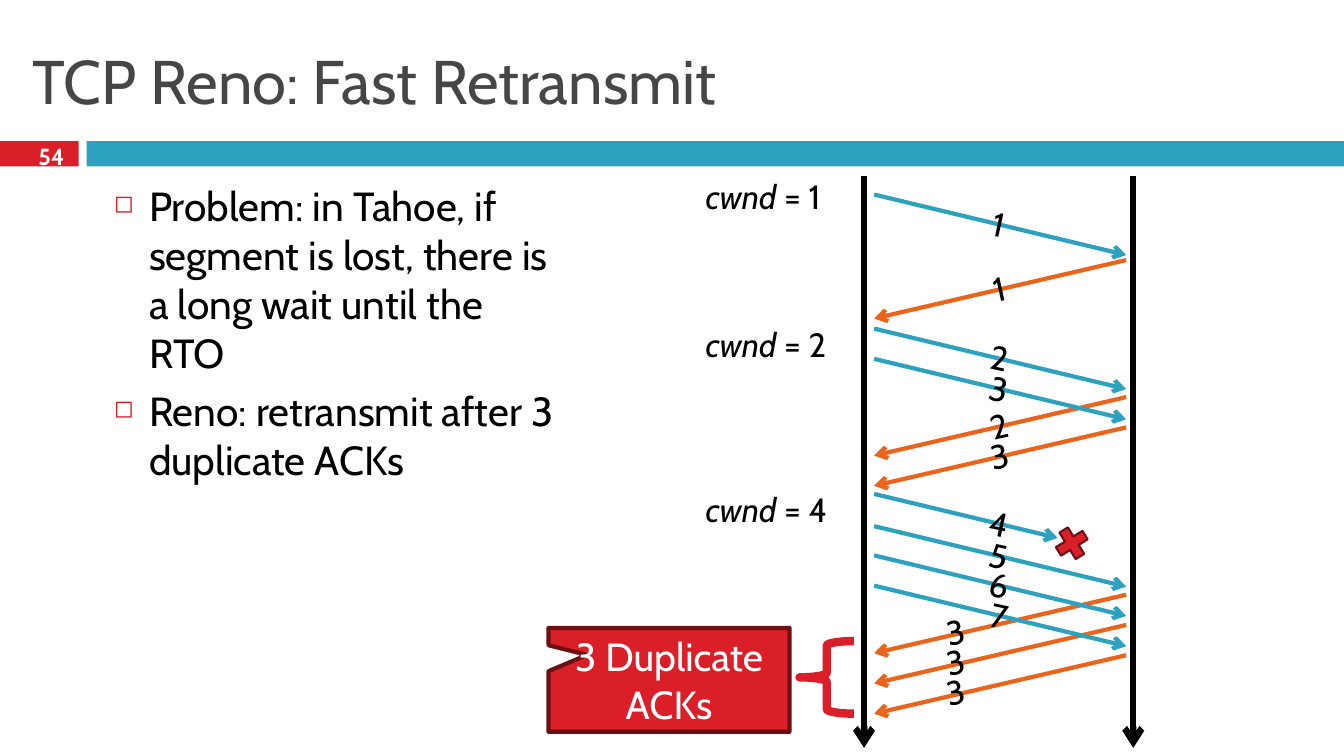
"""Build the slide on TCP Reno fast retransmit."""
from dataclasses import dataclass

from lxml.etree import SubElement
from pptx import Presentation
from pptx.dml.color import RGBColor
from pptx.enum.shapes import MSO_CONNECTOR as Connector, MSO_SHAPE as Preset
from pptx.enum.text import MSO_ANCHOR as Anchor, MSO_AUTO_SIZE as AutoSize, PP_ALIGN as Align
from pptx.oxml.ns import qn
from pptx.util import Inches, Pt

FONT = "Cabin"
TEAL, ORANGE, RED, DARK_RED = "2DA2BF", "EB641B", "DA1F28", "6D1014"
BLACK, WHITE, GREY = "000000", "FFFFFF", "464646"
SENDER, RECEIVER = 8.67, 11.17
SLOPE = 0.24
LABEL_WIDTH, LABEL_HEIGHT = 1.11, 0.5


@dataclass
class Segment:
    """A data segment sent from left to right."""
    number: str
    top: float
    reach: float = RECEIVER - SENDER


@dataclass
class Ack:
    """An acknowledgement sent from right to left."""
    number: str
    top: float
    label_left: float = 9.36
    label_drop: float = 0.03


@dataclass
class Window:
    """A congestion window size beside the timeline."""
    size: int
    top: float


SEGMENTS = [
    Segment("1", 1.93), Segment("2", 3.26), Segment("3", 3.56), Segment("4", 4.9, 1.82),
    Segment("5", 5.22), Segment("6", 5.51), Segment("7", 5.81),
]
ACKS = [Ack("1", 2.58), Ack("2", 3.94), Ack("3", 4.24)]
ACKS += [Ack("3", top, 8.92, 0.11) for top in (5.9, 6.2, 6.5)]
WINDOWS = [Window(1, 1.7), Window(2, 3.16), Window(4, 4.8)]
POINTS = [
    "Problem: in Tahoe, if segment is lost, there is a long wait until the RTO",
    "Reno: retransmit after 3 duplicate ACKs",
]


def color(value: str) -> RGBColor:
    """Turn a hex string into a colour."""
    return RGBColor.from_string(value)


def box(left: float, top: float, width: float, height: float) -> tuple:
    """Give a position and size as lengths."""
    return Inches(left), Inches(top), Inches(width), Inches(height)


def add_run(paragraph, text: str, size: float, hex_color: str = BLACK, **formats) -> None:
    """Append a formatted run to a paragraph."""
    run = paragraph.add_run()
    run.text = text
    for name, value in {"name": FONT, "size": Pt(size), **formats}.items():
        setattr(run.font, name, value)
    run.font.color.rgb = color(hex_color)


def add_text_box(slide, place: tuple, **formats):
    """Add a text box and return its shape."""
    shape = slide.shapes.add_textbox(*place)
    for name, value in {"word_wrap": True, **formats}.items():
        setattr(shape.text_frame, name, value)
    return shape


def add_shape(slide, preset, place: tuple, fill: str = "", line: str = "", weight: float = 0):
    """Add a flat preset shape."""
    shape = slide.shapes.add_shape(preset, *place)
    shape.shadow.inherit = False
    if fill:
        shape.fill.solid()
        shape.fill.fore_color.rgb = color(fill)
    else:
        shape.fill.background()
    if line:
        shape.line.color.rgb = color(line)
        shape.line.width = Pt(weight)
    else:
        shape.line.fill.background()
    return shape


def add_arrow(slide, start: tuple, end: tuple, hex_color: str, weight: float = 3) -> None:
    """Draw an arrow between two points."""
    ends = [Inches(value) for value in (*start, *end)]
    arrow = slide.shapes.add_connector(Connector.STRAIGHT, *ends)
    arrow.line.color.rgb = color(hex_color)
    arrow.line.width = Pt(weight)
    properties = arrow.element.spPr
    SubElement(properties.find(qn("a:ln")), qn("a:tailEnd"), type="arrow")
    SubElement(properties, qn("a:effectLst"))


def add_label(slide, number: str, left: float, top: float, rotation: float) -> None:
    """Write a number along an arrow."""
    shape = add_text_box(slide, box(left, top, LABEL_WIDTH, LABEL_HEIGHT))
    shape.rotation = rotation
    paragraph = shape.text_frame.paragraphs[0]
    paragraph.alignment = Align.CENTER
    add_run(paragraph, number, 24)


def add_header(slide) -> None:
    """Draw the title, the bars and the slide number."""
    add_shape(slide, Preset.RECTANGLE, box(0, 1.4, 0.78, 0.25), RED)
    add_shape(slide, Preset.RECTANGLE, box(0.86, 1.4, 12.47, 0.25), TEAL)
    title = slide.shapes.title
    title.left, title.top, title.width, title.height = box(0.22, 0.25, 12.89, 1.08)
    title.text_frame.auto_size = AutoSize.NONE
    title.text_frame.vertical_anchor = Anchor.MIDDLE
    paragraph = title.text_frame.paragraphs[0]
    paragraph.alignment = Align.LEFT
    add_run(paragraph, "TCP Reno: Fast Retransmit", 44, GREY)
    number = add_text_box(slide, box(0.22, 1.38, 0.58, 0.33), vertical_anchor=Anchor.MIDDLE)
    paragraph = number.text_frame.paragraphs[0]
    paragraph.alignment = Align.CENTER
    add_run(paragraph, "54", 16.6, WHITE, bold=True)


def add_points(slide) -> None:
    """Write the bulleted points."""
    frame = add_text_box(slide, box(1.03, 1.75, 4.61, 5.58)).text_frame
    for index, text in enumerate(POINTS):
        paragraph = frame.add_paragraph() if index else frame.paragraphs[0]
        paragraph.space_before = Pt(7)
        add_run(paragraph, text, 29)
        properties = paragraph._p.get_or_add_pPr()
        properties.set("marL", str(Inches(0.35)))
        properties.set("indent", str(-Inches(0.35)))
        SubElement(SubElement(properties, qn("a:buClr")), qn("a:srgbClr"), val=RED)
        SubElement(properties, qn("a:buSzPct"), val="60000")
        SubElement(properties, qn("a:buChar"), char="◻")


def add_timeline(slide) -> None:
    """Draw the exchange of segments and acknowledgements."""
    for ack in ACKS:
        add_arrow(slide, (RECEIVER, ack.top), (SENDER, ack.top + 0.58), ORANGE)
    for axis in (8.57, 11.24):
        add_arrow(slide, (axis, 1.75), (axis, 7.42), BLACK, 4.5)
    for segment in SEGMENTS:
        end = (SENDER + segment.reach, segment.top + SLOPE * segment.reach)
        add_arrow(slide, (SENDER, segment.top), end, TEAL)
        add_label(slide, segment.number, 9.36, segment.top + 0.04, 12.3)
    for window in WINDOWS:
        shape = add_text_box(slide, box(6.9, window.top, 1.45, 0.5), word_wrap=False)
        paragraph = shape.text_frame.paragraphs[0]
        add_run(paragraph, "cwnd", 24, italic=True)
        add_run(paragraph, f" = {window.size}", 24)
    loss = add_shape(slide, Preset.MATH_MULTIPLY, box(10.42, 5.18, 0.42, 0.42), RED, DARK_RED, 1.5)
    loss.rotation = 13.5
    for ack in ACKS:
        add_label(slide, ack.number, ack.label_left, ack.top + ack.label_drop, 347.5)


def add_callout(slide) -> None:
    """Mark the duplicate acknowledgements."""
    add_shape(slide, Preset.LEFT_BRACE, box(7.93, 6.36, 0.54, 0.72), line=RED, weight=6)
    place = box(5.44, 6.23, 2.39, 1.03)
    callout = add_shape(slide, Preset.RECTANGULAR_CALLOUT, place, RED, DARK_RED, 3)
    callout.adjustments[0], callout.adjustments[1] = -0.34, -0.24
    callout.text_frame.word_wrap = True
    callout.text_frame.vertical_anchor = Anchor.MIDDLE
    paragraph = callout.text_frame.paragraphs[0]
    paragraph.alignment = Align.CENTER
    add_run(paragraph, "3 Duplicate ACKs", 28, WHITE)


def main() -> None:
    """Build and save the presentation."""
    presentation = Presentation()
    presentation.slide_width, presentation.slide_height = Inches(13.33), Inches(7.5)
    slide = presentation.slides.add_slide(presentation.slide_layouts[5])
    for draw in (add_header, add_points, add_timeline, add_callout):
        draw(slide)
    presentation.save("out.pptx")


if __name__ == "__main__":
    main()
